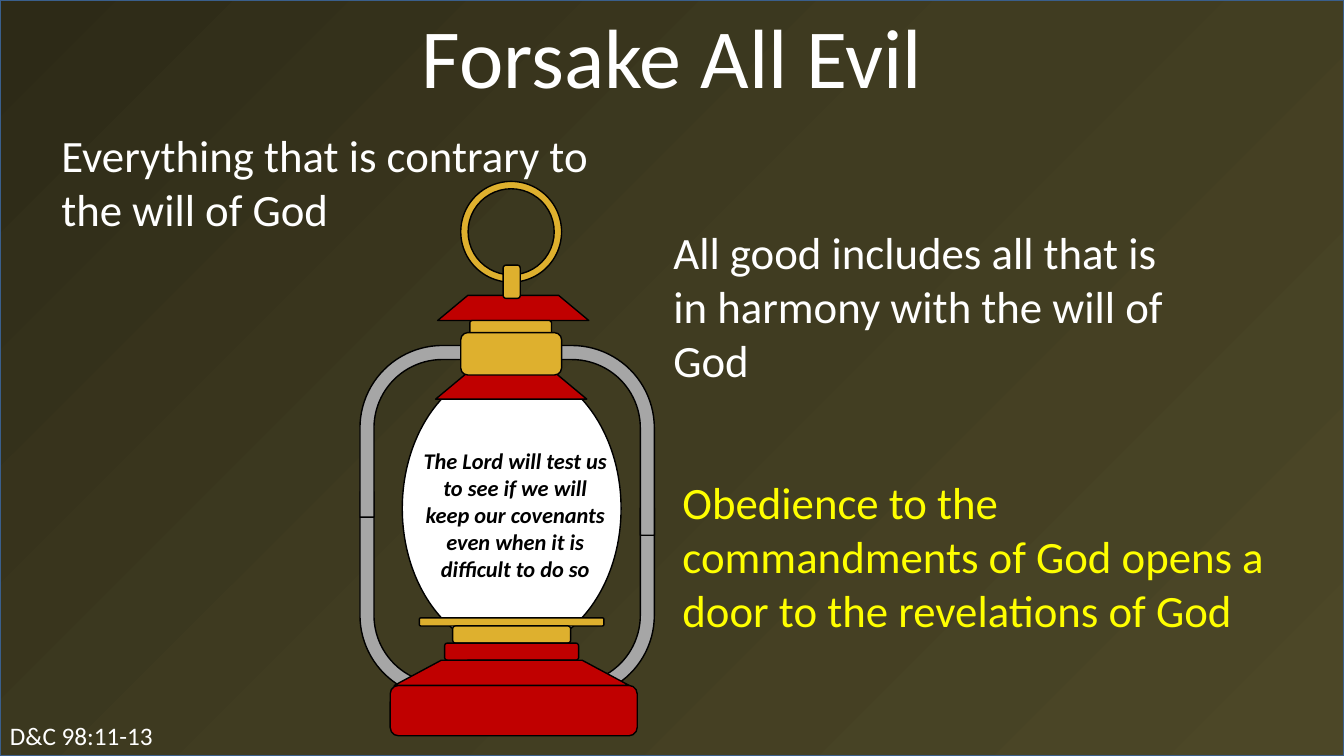
from copy import deepcopy

from pptx import Presentation
from pptx.dml.color import RGBColor
from pptx.enum.shapes import MSO_SHAPE
from pptx.enum.text import MSO_AUTO_SIZE, PP_ALIGN
from pptx.util import Pt

PX = 9144  # 100 px to the inch
WIDTH, HEIGHT = 1333, 750
WHITE, YELLOW, BLACK = "FFFFFF", "FFFF00", "000000"
RED, GOLD, STEEL = "C00000", "DEB02E", "A6A6A6"


def add_part(shapes, kind, box, line):
    part = shapes.add_shape(kind, *[n * PX for n in box])
    part.shadow.inherit = False
    part.line.color.rgb = RGBColor.from_string(line)
    part.line.width = Pt(1)
    return part


def add_text(shapes, text, box, size, color, align=PP_ALIGN.LEFT, wrap=True, strong=None):
    """Add a one-run text box; strong makes it bold italic."""
    frame = shapes.add_textbox(*[n * PX for n in box]).text_frame
    frame.word_wrap = wrap
    frame.auto_size = MSO_AUTO_SIZE.SHAPE_TO_FIT_TEXT
    paragraph = frame.paragraphs[0]
    paragraph.alignment = align
    run = paragraph.add_run()
    run.text = text
    run.font.name = "Calibri"
    run.font.size = Pt(size)
    run.font.bold = run.font.italic = strong
    run.font.color.rgb = RGBColor.from_string(color)


prs = Presentation()
prs.slide_width, prs.slide_height = WIDTH * PX, HEIGHT * PX
slide = prs.slides.add_slide(prs.slide_layouts[6])

# Background gradient
backdrop = add_part(slide.shapes, MSO_SHAPE.RECTANGLE, (0, 0, WIDTH, HEIGHT), "3A5F8C")
backdrop.fill.gradient()
backdrop.fill.gradient_angle = 315
first_stop = backdrop.element.xpath(".//a:gs")[0]
first_stop.addnext(deepcopy(first_stop))
shades = [(0, "2D2A17"), (0.5, "403C21"), (1, "4C4727")]
for stop, (position, shade) in zip(backdrop.fill.gradient_stops, shades):
    stop.position = position
    stop.color.rgb = RGBColor.from_string(shade)

# Title, reference and statements
add_text(slide.shapes, "D&C 98:11-13", (0, 710, 164, 40), 18, WHITE, wrap=False)
add_text(slide.shapes, "Forsake All Evil", (0, 0, WIDTH, 111), 60, WHITE, PP_ALIGN.CENTER)
statements = [
    ("Everything that is contrary to the will of God", (51, 122, 571, 118), WHITE),
    ("Obedience to the commandments of God opens a door to the revelations of God",
     (667, 466, 635, 172), YELLOW),
    ("All good includes all that is in harmony with the will of God",
     (658, 218, 529, 172), WHITE),
]
for statement, box, color in statements:
    add_text(slide.shapes, statement, box, 32, color)

# Lantern
lantern = slide.shapes.add_group_shape().shapes
frame_bars = [
    ((507, 504, 142, 201), ("flipH", "flipV")),
    ((507, 330, 142, 201), ("flipH",)),
    ((357, 488, 142, 217), ("flipV",)),
    ((357, 330, 142, 183), ()),
]
for box, flips in frame_bars:
    bar = add_part(lantern, MSO_SHAPE.BENT_ARROW, box, BLACK)
    bar.fill.solid()
    bar.fill.fore_color.rgb = RGBColor.from_string(STEEL)
    for i, value in enumerate((0.098, 0.139, 0.119, 0.576)):
        bar.adjustments[i] = value
    for flip in flips:
        bar.element.spPr.xfrm.set(flip, "1")

ROUND, FLARE = MSO_SHAPE.ROUNDED_RECTANGLE, MSO_SHAPE.FLOWCHART_MANUAL_OPERATION
body_parts = [
    (MSO_SHAPE.OVAL, (399, 363, 217, 283), WHITE, 0),
    (FLARE, (432, 371, 150, 25), RED, 180),
    (FLARE, (434, 293, 150, 25), RED, 180),
    (ROUND, (466, 318, 81, 14), GOLD, 0),
    (ROUND, (457, 330, 100, 42), GOLD, 0),
    (MSO_SHAPE.DONUT, (457, 180, 100, 100), GOLD, 0),
    (ROUND, (491, 271, 33, 17), GOLD, 270),
    (ROUND, (416, 613, 183, 8), GOLD, 0),
    (ROUND, (387, 680, 245, 50), RED, 0),
    (ROUND, (449, 621, 117, 17), GOLD, 0),
    (ROUND, (441, 638, 133, 17), RED, 0),
    (FLARE, (391, 655, 233, 25), RED, 180),
]
for kind, box, color, rotation in body_parts:
    part = add_part(lantern, kind, box, BLACK)
    part.fill.solid()
    part.fill.fore_color.rgb = RGBColor.from_string(color)
    part.rotation = rotation
    if kind == MSO_SHAPE.DONUT:
        part.adjustments[0] = 0.073

add_text(lantern, "The Lord will test us to see if we will keep our covenants "
         "even when it is difficult to do so",
         (407, 439, 208, 145), 16, BLACK, PP_ALIGN.CENTER, strong=True)

prs.save("out.pptx")
